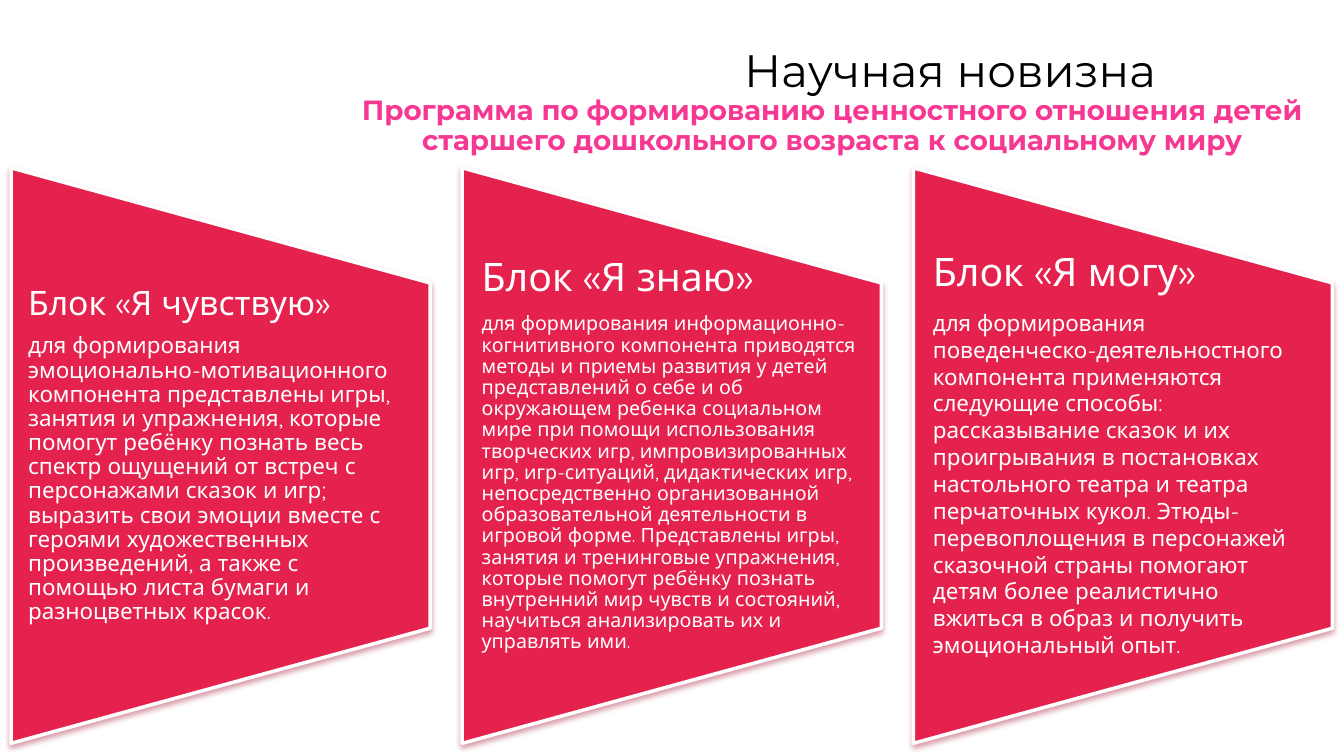
from lxml.etree import SubElement
from pptx import Presentation
from pptx.dml.color import RGBColor
from pptx.enum.shapes import MSO_SHAPE
from pptx.enum.text import MSO_ANCHOR, PP_ALIGN
from pptx.oxml.ns import qn
from pptx.util import Cm, Pt

COLORS = {"title": "000000", "accent": "F63892", "panel": "E5224E",
          "light": "FFFFFF", "shadow": "9C0023"}

# heading, heading size, side inset, body, body size, body line spacing
BLOCKS = [
    ("Блок «Я чувствую»", 24, 0.43,
     "для формирования эмоционально-мотивационного компонента представлены "
     "игры, занятия и упражнения, которые помогут ребёнку познать весь спектр "
     "ощущений от встреч с персонажами сказок и игр; выразить свои эмоции "
     "вместе с героями художественных произведений, а также с помощью листа "
     "бумаги и разноцветных красок.", 16, 0.9),
    ("Блок «Я знаю»", 28, 0.49,
     "для формирования информационно-когнитивного компонента приводятся методы "
     "и приемы развития у детей представлений о себе и об окружающем ребенка "
     "социальном мире при помощи использования творческих игр, "
     "импровизированных игр, игр-ситуаций, дидактических игр, непосредственно "
     "организованной образовательной деятельности в игровой форме. "
     "Представлены игры, занятия и тренинговые упражнения, которые помогут "
     "ребёнку познать внутренний мир чувств и состояний, научиться "
     "анализировать их и управлять ими.", 14, 0.9),
    ("Блок «Я могу»", 28, 0.49,
     "для формирования поведенческо-деятельностного компонента применяются "
     "следующие способы: рассказывание сказок и их проигрывания в постановках "
     "настольного театра и театра перчаточных кукол. Этюды-перевоплощения в "
     "персонажей сказочной страны помогают детям более реалистично вжиться в "
     "образ и получить эмоциональный опыт.", 16, 1.0),
]
PANEL_W, PANEL_H, PANEL_MID_Y = 10.56, 14.5, 11.48
TEXT_H, FIRST_LEFT, PITCH = 8.71, 0.28, 11.37


def rgb(name):
    return RGBColor.from_string(COLORS[name])


class SlideBuilder:
    def __init__(self, prs):
        self.s = prs.slides.add_slide(prs.slide_layouts[6])

    def text(self, left, top, width, height, paragraphs, inset=(0.25, 0.13)):
        """Add a middle-anchored box; each paragraph is a dict of format values."""
        box = self.s.shapes.add_textbox(Cm(left), Cm(top), Cm(width), Cm(height))
        tf = box.text_frame
        side, edge = Cm(inset[0]), Cm(inset[1])
        frame = {"word_wrap": True, "vertical_anchor": MSO_ANCHOR.MIDDLE,
                 "margin_left": side, "margin_right": side,
                 "margin_top": edge, "margin_bottom": edge}
        for name, value in frame.items():
            setattr(tf, name, value)
        for i, item in enumerate(paragraphs):
            p = tf.add_paragraph() if i else tf.paragraphs[0]
            for name, value in item["layout"].items():
                setattr(p, name, value)
            if "indent" in item:
                p._p.get_or_add_pPr().set("marL", str(Cm(item["indent"])))
            r = p.add_run()
            r.text = item["text"]
            for name, value in item["font"].items():
                setattr(r.font, name, value)
            r.font.color.rgb = rgb(item["color"])

    def panel(self, mid_x, mid_y, width, height):
        """Add a trapezoid turned a quarter left, sized as it appears."""
        sp = self.s.shapes.add_shape(
            MSO_SHAPE.FLOWCHART_MANUAL_OPERATION, Cm(mid_x - height / 2),
            Cm(mid_y - width / 2), Cm(height), Cm(width))
        sp.rotation = 270
        sp.fill.solid()
        sp.fill.fore_color.rgb = rgb("panel")
        sp.line.color.rgb = rgb("light")
        sp.line.width = Pt(2.5)
        sp.shadow.inherit = False
        effects = sp._element.spPr.find(qn("a:effectLst"))
        shadow = SubElement(effects, qn("a:outerShdw"), blurRad=str(Pt(4)),
                            dist=str(Pt(2)), dir="5400000", rotWithShape="0")
        color = SubElement(shadow, qn("a:srgbClr"), val=COLORS["shadow"])
        SubElement(color, qn("a:alpha"), val="38000")

    def block(self, left, heading, heading_size, inset, body, body_size, body_spacing):
        self.panel(left + PANEL_W / 2, PANEL_MID_Y, PANEL_W, PANEL_H)
        rows = [(heading, heading_size, 0.9), (body, body_size, body_spacing)]
        paragraphs = [
            {"text": text, "color": "light",
             "layout": {"line_spacing": spacing, "space_after": Pt(size * 0.35)},
             "font": {"size": Pt(size), "name": "Quicksand"}}
            for text, size, spacing in rows]
        self.text(left, PANEL_MID_Y - TEXT_H / 2, PANEL_W, TEXT_H, paragraphs, (inset, 0))


def main():
    prs = Presentation()
    prs.slide_width, prs.slide_height = Cm(33.87), Cm(19.05)
    slide = SlideBuilder(prs)
    slide.text(8.05, 0.71, 25.83, 3.58, [
        {"text": "Научная новизна", "color": "title", "indent": 5.95,
         "layout": {"alignment": PP_ALIGN.CENTER, "line_spacing": 1.0},
         "font": {"size": Pt(32.4), "name": "Montserrat"}},
        {"text": "Программа по формированию ценностного отношения детей "
                 "старшего дошкольного возраста к социальному миру",
         "color": "accent",
         "layout": {"alignment": PP_ALIGN.CENTER, "line_spacing": 0.9},
         "font": {"size": Pt(19.8), "name": "Montserrat", "bold": True}},
    ])
    for i, content in enumerate(BLOCKS):
        slide.block(FIRST_LEFT + i * PITCH, *content)
    prs.save("out.pptx")


if __name__ == "__main__":
    main()
